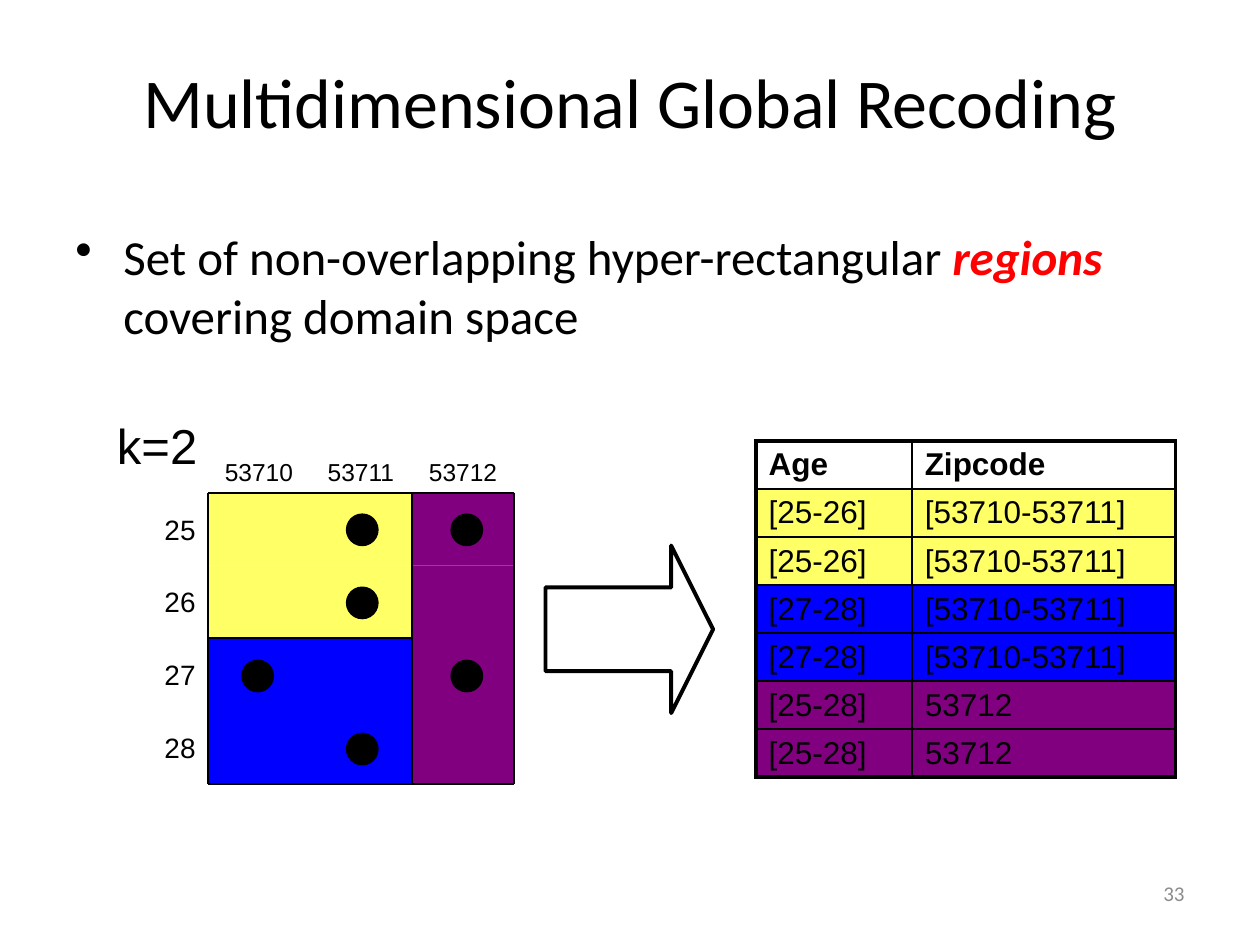
from dataclasses import dataclass

from lxml import etree
from pptx import Presentation
from pptx.dml.color import RGBColor
from pptx.enum.shapes import MSO_CONNECTOR, MSO_SHAPE
from pptx.enum.text import MSO_ANCHOR, PP_ALIGN
from pptx.oxml.ns import qn
from pptx.util import Inches, Pt

LEFT, CENTER, RIGHT = PP_ALIGN.LEFT, PP_ALIGN.CENTER, PP_ALIGN.RIGHT
TOP, MIDDLE, BOTTOM = MSO_ANCHOR.TOP, MSO_ANCHOR.MIDDLE, MSO_ANCHOR.BOTTOM
RECT, OVAL, ARROW = MSO_SHAPE.RECTANGLE, MSO_SHAPE.OVAL, MSO_SHAPE.RIGHT_ARROW
STRAIGHT = MSO_CONNECTOR.STRAIGHT


@dataclass(frozen=True)
class Theme:
    head: str = "Calibri"
    body: str = "Arial"
    black: str = "000000"
    white: str = "FFFFFF"
    gray: str = "8C8C8C"
    red: str = "FF0000"
    yellow: str = "FFFF66"
    blue: str = "0000FF"
    purple: str = "800080"
    title: int = 40
    large: int = 28
    cell: int = 18
    row: int = 16
    col: int = 14
    small: int = 12
    thin: float = 1
    thick: float = 2.25


T = Theme()
ZIPS = ["53710", "53711", "53712"]
AGES = ["25", "26", "27", "28"]
REGIONS = [[T.yellow, T.yellow, T.purple]] * 2 + [[T.blue, T.blue, T.purple]] * 2
POINTS = [(0, 1), (0, 2), (1, 1), (2, 0), (2, 2), (3, 1)]
# Region borders in grid units: column, row to column, row
EDGES = [(0, 0, 3, 0), (0, 4, 3, 4), (0, 2, 2, 2),
         (0, 0, 0, 4), (2, 0, 2, 4), (3, 0, 3, 4)]
RECORDS = [("[25-26]", "[53710-53711]", T.yellow),
           ("[27-28]", "[53710-53711]", T.blue),
           ("[25-28]", "53712", T.purple)]


def rgb(color):
    return RGBColor.from_string(color)


def style(para, size, face=T.body, color=T.black, align=LEFT):
    para.alignment = align
    para.font.size, para.font.name = Pt(size), face
    para.font.color.rgb = rgb(color)


def add_text(slide, box, text, size, anchor=TOP, **look):
    frame = slide.shapes.add_textbox(*map(Inches, box)).text_frame
    frame.word_wrap = True
    frame.vertical_anchor = anchor
    para = frame.paragraphs[0]
    para.text = text
    style(para, size, **look)
    return para


def add_form(slide, kind, box, fill, line=None, width=0.75):
    form = slide.shapes.add_shape(kind, *map(Inches, box))
    form.shadow.inherit = False
    form.fill.solid()
    form.fill.fore_color.rgb = rgb(fill)
    if line:
        form.line.color.rgb, form.line.width = rgb(line), Pt(width)
    else:
        form.line.fill.background()
    return form


def add_line(slide, ends):
    line = slide.shapes.add_connector(STRAIGHT, *map(Inches, ends))
    line.line.color.rgb, line.line.width = rgb(T.black), Pt(T.thin)
    etree.SubElement(line._element.spPr, qn("a:effectLst"))


def add_bullet(slide, box):
    para = add_text(slide, box, "Set of non-overlapping hyper-rectangular ",
                    T.large, face=T.head)
    key = para.add_run()
    key.text = "regions "
    key.font.bold = key.font.italic = True
    key.font.color.rgb = rgb(T.red)
    para.add_run().text = "covering domain space"
    props = para._p.get_or_add_pPr()
    props.set("marL", str(Inches(0.38)))
    props.set("indent", str(Inches(-0.38)))
    mark = etree.Element(qn("a:buChar"), char="•")
    props.insert_element_before(mark, "a:tabLst", "a:defRPr", "a:extLst")


def add_grid(slide, box):
    left, top, width, height = box
    wide, high = width / len(ZIPS), height / len(AGES)

    # Axis labels
    for col, code in enumerate(ZIPS):
        add_text(slide, (left + col * wide, top - high, wide, high), code,
                 T.col, BOTTOM, align=CENTER)
    for row, age in enumerate(AGES):
        add_text(slide, (left - wide, top + row * high, wide, high), age,
                 T.row, MIDDLE, align=RIGHT)

    # Coloured cells and region borders
    for row, colors in enumerate(REGIONS):
        for col, color in enumerate(colors):
            add_form(slide, RECT, (left + col * wide, top + row * high, wide, high), color)
    for x1, y1, x2, y2 in EDGES:
        add_line(slide, (left + x1 * wide, top + y1 * high,
                         left + x2 * wide, top + y2 * high))

    # Data points
    for row, col in POINTS:
        spot = (left + 0.27 + col * 0.83, top + 0.17 + row * 0.58, 0.25, 0.25)
        add_form(slide, OVAL, spot, T.black, T.black)


def set_edge(cell, side, width):
    edge = etree.SubElement(cell._tc.get_or_add_tcPr(), qn("a:ln" + side), w=str(Pt(width)))
    fill = etree.SubElement(edge, qn("a:solidFill"))
    etree.SubElement(fill, qn("a:srgbClr"), val=T.black)


def add_records(slide, box):
    rows = [("Age", "Zipcode", T.white)] + [rec for rec in RECORDS for _ in range(2)]
    last = len(rows) - 1
    table = slide.shapes.add_table(len(rows), 2, *map(Inches, box)).table
    table.first_row = table.horz_banding = False
    for col, width in zip(table.columns, (1.24, 2.09)):
        col.width = Inches(width)
    for r, (age, code, color) in enumerate(rows):
        table.rows[r].height = Inches(box[3] / len(rows))
        for c, text in enumerate((age, code)):
            cell = table.cell(r, c)
            cell.margin_top = cell.margin_bottom = Inches(0.04)
            cell.vertical_anchor = MIDDLE
            outer = {"L": c == 0, "R": c == 1, "T": r == 0, "B": r == last}
            for side, rim in outer.items():
                set_edge(cell, side, T.thick if rim else T.thin)
            cell.fill.solid()
            cell.fill.fore_color.rgb = rgb(color)
            para = cell.text_frame.paragraphs[0]
            para.text = text
            style(para, T.cell)
            para.font.bold = r == 0


def main():
    deck = Presentation()
    deck.slide_width, deck.slide_height = Inches(10), Inches(7.5)
    slide = deck.slides.add_slide(deck.slide_layouts[6])

    # Title, bullet and page number
    add_text(slide, (0.5, 0.17, 9, 1.25), "Multidimensional Global Recoding",
             T.title, MIDDLE, face=T.head, align=CENTER)
    add_bullet(slide, (0.5, 1.75, 8.92, 1.74))
    add_text(slide, (7.17, 6.83, 2.33, 0.52), "33", T.small, MIDDLE,
             face=T.head, color=T.gray, align=RIGHT)

    # Domain grid, arrow and recoded table
    add_grid(slide, (1.65, 3.91, 2.43, 2.31))
    add_text(slide, (0.83, 3.25, 3.75, 0.57), "k=2", T.large)
    arrow = add_form(slide, ARROW, (4.33, 4.33, 1.33, 1.33), T.white, T.black, T.thick)
    arrow.adjustments[0], arrow.adjustments[1] = 0.5, 0.25
    add_records(slide, (6, 3.5, 3.33, 2.67))

    deck.save("out.pptx")


if __name__ == "__main__":
    main()
